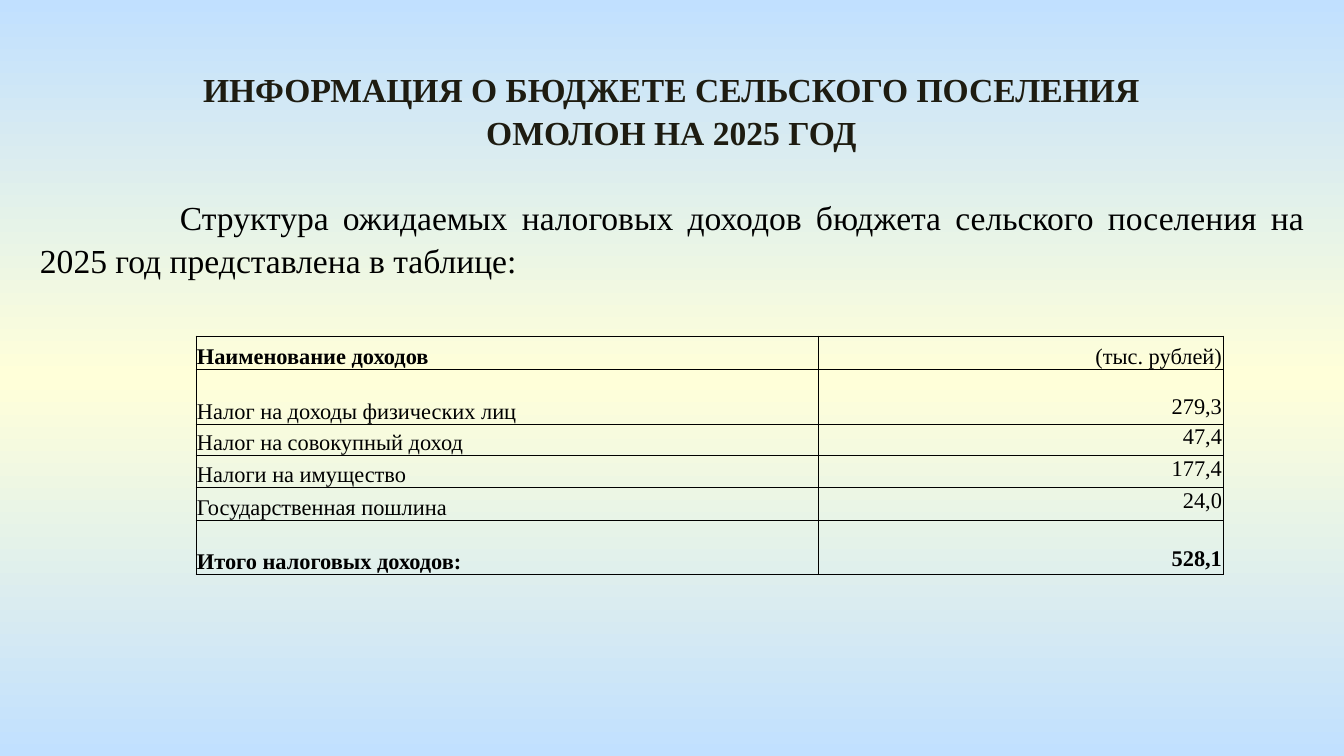
import copy

import lxml.etree
import pptx
import pptx.dml.color
import pptx.enum.text
import pptx.oxml.ns
import pptx.util

SCALE = 914400 / 134.4
SERIF = "Times New Roman"
BLACK = pptx.dml.color.RGBColor(0x00, 0x00, 0x00)
TITLE_COLOR = pptx.dml.color.RGBColor(0x1E, 0x1C, 0x11)
SKY = pptx.dml.color.RGBColor(0xC1, 0xE0, 0xFF)
CREAM = pptx.dml.color.RGBColor(0xFF, 0xFF, 0xD9)
ALIGN = pptx.enum.text.PP_ALIGN
ANCHOR = pptx.enum.text.MSO_ANCHOR

COLUMN_WIDTHS = (622, 405)
INCOME_ROWS = (
    ("Наименование доходов", "(тыс. рублей)", 33),
    ("Налог на доходы физических лиц", "279,3", 55),
    ("Налог на совокупный доход", "47,4", 32),
    ("Налоги на имущество", "177,4", 32),
    ("Государственная пошлина", "24,0", 33),
    ("Итого налоговых доходов:", "528,1", 54),
)


def px(length):
    """Turn pixels into EMU."""
    return pptx.util.Emu(round(length * SCALE))


def add_text(paragraph, text, size, color, alignment, bold=False):
    """Add one formatted run to a paragraph."""
    paragraph.alignment = alignment
    run = paragraph.add_run()
    run.text = text
    run.font.name = SERIF
    run.font.size = pptx.util.Pt(size)
    run.font.bold = bold
    run.font.color.rgb = color


def set_background(slide):
    """Fill the slide with a vertical sky-cream-sky gradient."""
    fill = slide.background.fill
    fill.gradient()
    fill.gradient_angle = 90
    stop_list = slide.element.find(".//" + pptx.oxml.ns.qn("a:gsLst"))
    stop_list.insert(1, copy.deepcopy(stop_list[0]))
    for stop, position, color in zip(fill.gradient_stops, (0, 0.5, 1), (SKY, CREAM, SKY)):
        stop.position = position
        stop.color.rgb = color


def prepare_frame(shape):
    """Give a text shape wrapping, top anchoring and even insets."""
    frame = shape.text_frame
    frame.word_wrap = True
    frame.auto_size = pptx.enum.text.MSO_AUTO_SIZE.NONE
    frame.vertical_anchor = ANCHOR.TOP
    frame.margin_left = frame.margin_right = px(13)
    frame.margin_top = frame.margin_bottom = px(7)
    paragraph = frame.paragraphs[0]
    paragraph.line_spacing = 1.06
    return paragraph


def add_title(slide, left, top, width, height):
    """Place the slide title."""
    title = slide.shapes.title
    title.left, title.top, title.width, title.height = map(px, (left, top, width, height))
    paragraph = prepare_frame(title)
    text = "ИНФОРМАЦИЯ О БЮДЖЕТЕ СЕЛЬСКОГО ПОСЕЛЕНИЯ ОМОЛОН НА 2025 ГОД"
    add_text(paragraph, text, 18, TITLE_COLOR, ALIGN.CENTER, True)


def add_introduction(slide, left, top, width, height):
    """Place the justified introduction with its first-line indent."""
    box = slide.shapes.add_textbox(*map(px, (left, top, width, height)))
    paragraph = prepare_frame(box)
    paragraph._p.get_or_add_pPr().set("indent", str(px(140)))
    text = (
        "Структура ожидаемых налоговых доходов бюджета сельского поселения "
        "на 2025 год представлена в таблице:"
    )
    add_text(paragraph, text, 18, BLACK, ALIGN.JUSTIFY)


def add_borders(cell):
    """Draw a thin black line on all four sides of a cell."""
    properties = cell._tc.get_or_add_tcPr()
    qn = pptx.oxml.ns.qn
    for index, side in enumerate("LRTB"):
        line = lxml.etree.Element(qn("a:ln" + side), w=str(pptx.util.Pt(0.5)))
        fill = lxml.etree.SubElement(line, qn("a:solidFill"))
        lxml.etree.SubElement(fill, qn("a:srgbClr"), val=str(BLACK))
        properties.insert(index, line)


def add_income_table(slide, left, top):
    """Place the income table, with sums set low in the tall rows."""
    width, height = sum(COLUMN_WIDTHS), sum(row[2] for row in INCOME_ROWS)
    frame = slide.shapes.add_table(
        len(INCOME_ROWS), len(COLUMN_WIDTHS), *map(px, (left, top, width, height))
    )
    table = frame.table
    table.first_row = table.horz_banding = False
    for column, column_width in zip(table.columns, COLUMN_WIDTHS):
        column.width = px(column_width)
    last = len(INCOME_ROWS) - 1
    for row_index, (name, amount, row_height) in enumerate(INCOME_ROWS):
        table.rows[row_index].height = px(row_height)
        for column_index, text in enumerate((name, amount)):
            cell = table.cell(row_index, column_index)
            is_sum = column_index == 1 and row_index > 0
            cell.fill.background()
            add_borders(cell)
            cell.margin_left = cell.margin_right = px(1)
            cell.margin_top = px(26 if is_sum and row_height > 50 else 1)
            cell.margin_bottom = 0
            cell.vertical_anchor = ANCHOR.TOP if is_sum else ANCHOR.BOTTOM
            alignment = ALIGN.RIGHT if column_index else ALIGN.JUSTIFY
            bold = row_index == last or (row_index == 0 and column_index == 0)
            add_text(cell.text_frame.paragraphs[0], text, 12, BLACK, alignment, bold)


def main():
    """Build and save the presentation."""
    presentation = pptx.Presentation()
    presentation.slide_width, presentation.slide_height = px(1344), px(756)
    slide = presentation.slides.add_slide(presentation.slide_layouts[5])
    set_background(slide)
    add_title(slide, 152, 60, 1039, 95)
    add_introduction(slide, 27, 188, 1291, 95)
    add_income_table(slide, 196, 336)
    presentation.save("out.pptx")


if __name__ == "__main__":
    main()
